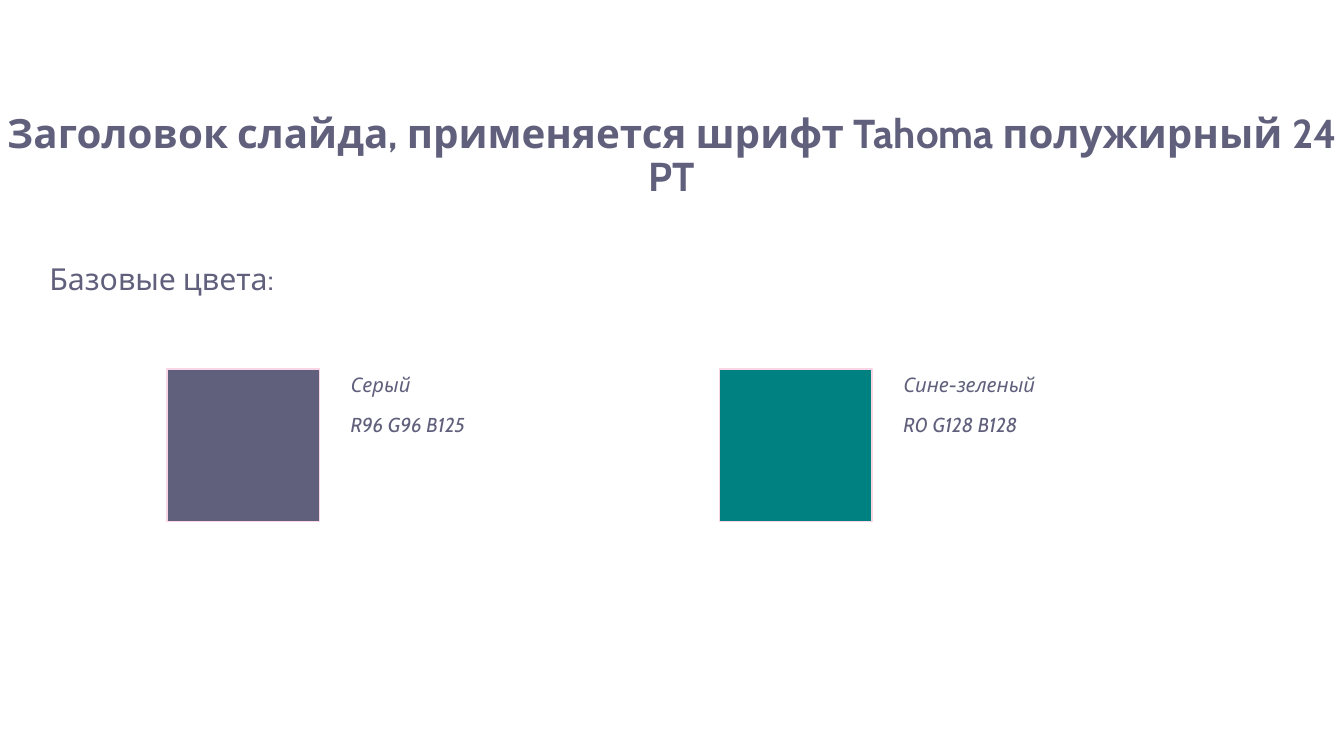
from dataclasses import dataclass

from pptx import Presentation
from pptx.dml.color import RGBColor
from pptx.enum.shapes import MSO_SHAPE
from pptx.enum.text import MSO_ANCHOR, PP_ALIGN
from pptx.slide import Slide
from pptx.util import Pt

FONT = "Cabin"
COLORS = {"gray": "60607D", "teal": "008181", "outline": "FAD5E5"}

SWATCH_LEFT, SWATCH_TOP, SWATCH_SIZE = 99.4, 219.6, 90.7
SWATCH_STEP = 329
LABEL_OFFSET, LABEL_WIDTH = 102.2, 198.7


@dataclass
class TextBlock:
    lines: list[str]
    left: float
    top: float
    width: float
    height: float
    size: float
    bold: bool = False
    italic: bool = False
    align: PP_ALIGN = PP_ALIGN.LEFT
    anchor: MSO_ANCHOR = MSO_ANCHOR.TOP
    side_inset: float = 7.2


@dataclass
class Swatch:
    color: str
    name: str
    rgb: str


SWATCHES = [
    Swatch("gray", "Серый", "R96 G96 B125"),
    Swatch("teal", "Сине-зеленый", "R0 G128 B128"),
]


def rgb(name: str) -> RGBColor:
    return RGBColor.from_string(COLORS[name])


def add_text(s: Slide, block: TextBlock) -> None:
    box = s.shapes.add_textbox(
        Pt(block.left), Pt(block.top), Pt(block.width), Pt(block.height))
    tf = box.text_frame
    tf.word_wrap = True
    tf.vertical_anchor = block.anchor
    tf.margin_left = tf.margin_right = Pt(block.side_inset)
    tf.margin_top = tf.margin_bottom = Pt(3.6)
    for i, line in enumerate(block.lines):
        p = tf.add_paragraph() if i else tf.paragraphs[0]
        p.text = line
        p.alignment = block.align
        p.line_spacing = 0.9
        if i:
            p.space_before = Pt(11.1)
        p.font.name = FONT
        p.font.size = Pt(block.size)
        p.font.bold = block.bold
        p.font.italic = block.italic
        p.font.color.rgb = rgb("gray")


def add_swatch(s: Slide, swatch: Swatch, left: float) -> None:
    sp = s.shapes.add_shape(
        MSO_SHAPE.RECTANGLE,
        Pt(left), Pt(SWATCH_TOP), Pt(SWATCH_SIZE), Pt(SWATCH_SIZE))
    sp.shadow.inherit = False
    sp.fill.solid()
    sp.fill.fore_color.rgb = rgb(swatch.color)
    sp.line.color.rgb = rgb("outline")
    sp.line.width = Pt(0.75)
    add_text(s, TextBlock([swatch.name, swatch.rgb], left + LABEL_OFFSET, SWATCH_TOP,
                          LABEL_WIDTH, SWATCH_SIZE, 12, italic=True))


def main() -> None:
    prs = Presentation()
    prs.slide_width, prs.slide_height = Pt(800), Pt(450)
    s = prs.slides.add_slide(prs.slide_layouts[6])

    # Title and subheading
    add_text(s, TextBlock(
        ["Заголовок слайда, применяется шрифт Tahoma полужирный 24 PT"],
        0, 72, 800, 42.5, 24, bold=True, align=PP_ALIGN.CENTER,
        anchor=MSO_ANCHOR.MIDDLE, side_inset=3.6))
    add_text(s, TextBlock(["Базовые цвета:"], 22.3, 154.1, 756, 35.3, 18))

    # Colour swatches with labels
    for i, swatch in enumerate(SWATCHES):
        add_swatch(s, swatch, SWATCH_LEFT + i * SWATCH_STEP)

    prs.save("out.pptx")


if __name__ == "__main__":
    main()
